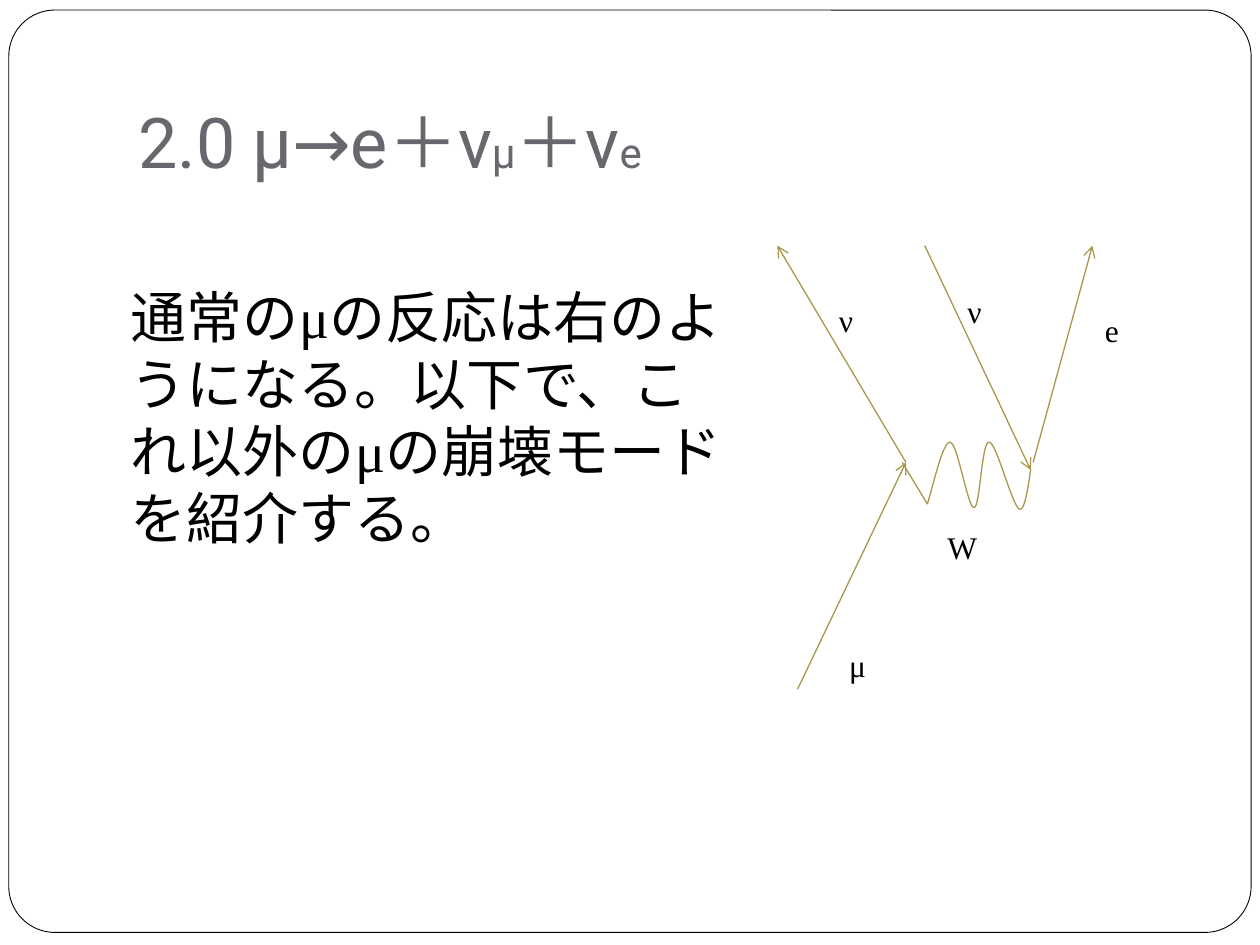
from lxml.etree import SubElement as Sub
from pptx import Presentation
from pptx.dml.color import RGBColor as Rgb
from pptx.enum.shapes import MSO_CONNECTOR as Link, MSO_SHAPE as Shape
from pptx.enum.text import MSO_ANCHOR as Anchor, MSO_AUTO_SIZE as Auto
from pptx.oxml.ns import qn
from pptx.util import Inches, Pt

GOLD = "A9974E"
SERIF = "Times New Roman"


def color(code):
    return Rgb.from_string(code)


def stroke(shape, code, width):
    shape.line.color.rgb = color(code)
    shape.line.width = Pt(width)


def add_text(slide, text, box, size=18, font=SERIF, code="000000",
             wrap=False, anchor=Anchor.TOP, low=0.05):
    frame = slide.shapes.add_textbox(*map(Inches, box)).text_frame
    frame.word_wrap = wrap
    frame.auto_size = Auto.NONE
    frame.vertical_anchor = anchor
    frame.margin_bottom = Inches(low)
    runs = [(text, size)] if isinstance(text, str) else text
    for part, points in runs:
        run = frame.paragraphs[0].add_run()
        run.text = part
        run.font.size = Pt(points)
        run.font.name = font
        run.font.color.rgb = color(code)


def add_frame(slide):
    box = map(Inches, (0.07, 0.08, 9.86, 7.32))
    frame = slide.shapes.add_shape(Shape.ROUNDED_RECTANGLE, *box)
    frame.adjustments[0] = 0.05
    frame.shadow.inherit = False
    frame.fill.solid()
    frame.fill.fore_color.rgb = color("FFFFFF")
    stroke(frame, "000000", 0.5)


def add_arrow(slide, start, end):
    ends = map(Inches, (*start, *end))
    arrow = slide.shapes.add_connector(Link.STRAIGHT, *ends)
    stroke(arrow, GOLD, 0.75)
    Sub(arrow.line._get_or_add_ln(), qn("a:tailEnd"), type="arrow")
    Sub(arrow._element.spPr, qn("a:effectLst"))


def bezier(a, b, c, d, steps=16):
    for i in range(1, steps + 1):
        t = i / steps
        u = 1 - t
        yield tuple(u**3 * p + 3 * u * u * t * q + 3 * u * t * t * r + t**3 * s
                    for p, q, r, s in zip(a, b, c, d))


def add_wave(slide, start, first, curves):
    points = [start, first]
    for curve in curves:
        points += bezier(points[-1], *curve)
    head, *rest = [(Inches(x), Inches(y)) for x, y in points]
    pen = slide.shapes.build_freeform(*head)
    pen.add_line_segments(rest, close=False)
    wave = pen.convert_to_shape()
    wave.shadow.inherit = False
    wave.fill.background()
    stroke(wave, GOLD, 0.75)


def main():
    deck = Presentation()
    deck.slide_width, deck.slide_height = Inches(10), Inches(7.5)
    slide = deck.slides.add_slide(deck.slide_layouts[6])
    add_frame(slide)

    title = [("2.0 μ→e＋ν", 40), ("μ", 24), ("＋ν", 40), ("e", 24)]
    add_text(slide, title, (1, 0.3, 8.5, 1.25), font="Roboto", code="69676D",
             wrap=True, anchor=Anchor.BOTTOM, low=0.1)
    body = "通常のμの反応は右のようになる。以下で、これ以外のμの崩壊モードを紹介する。"
    add_text(slide, body, (0.94, 2.19, 4.92, 2.26), size=32, wrap=True)

    top, mid = 1.95, 3.67
    decay = (7.19, mid)
    for start, end in (
        ((6.33, 5.47), decay),
        (decay, (6.17, top)),
        ((8.2, mid), (8.67, top)),
        ((7.34, top), (8.18, 3.73)),
    ):
        add_arrow(slide, start, end)

    add_wave(slide, (7.16, mid), (7.36, 4), (
        ((7.39, 3.92), (7.48, 3.5), (7.54, 3.51)),
        ((7.6, 3.51), (7.68, 4.03), (7.73, 4.03)),
        ((7.78, 4.03), (7.79, 3.5), (7.85, 3.51)),
        ((7.91, 3.51), (8.03, 4.01), (8.09, 4.04)),
        ((8.14, 4.08), (8.18, 3.72), (8.18, 3.72)),
    ))

    for name, left, y, width in (
        ("μ", 6.64, 5.08, 0.34),
        ("ν", 6.56, 2.34, 0.32),
        ("ν", 7.58, 2.27, 0.32),
        ("e", 8.67, 2.42, 0.33),
        ("W", 7.42, 4.14, 0.43),
    ):
        add_text(slide, name, (left, y, width, 0.4))

    deck.save("out.pptx")


if __name__ == "__main__":
    main()
